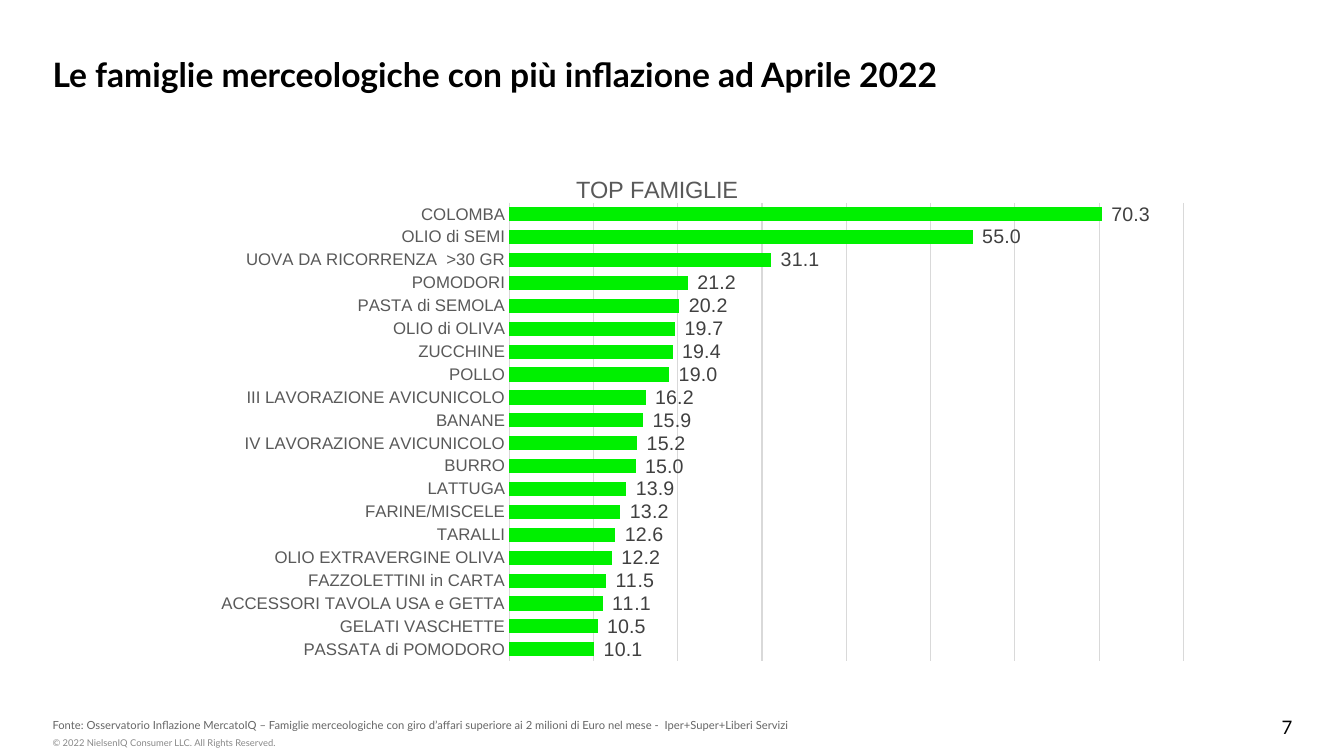
import pptx
import pptx.util
import pptx.chart.data
import pptx.dml.color
import pptx.enum.chart
import pptx.enum.text
import pptx.oxml
import pptx.oxml.ns

RGB = pptx.dml.color.RGBColor
BLACK = RGB(0, 0, 0)
GREEN = RGB(0, 240, 0)
DARK = RGB(64, 64, 64)
GREY = RGB(89, 89, 89)
NOTE = RGB(102, 102, 102)
PALE = RGB(136, 136, 136)
RULE = RGB(217, 217, 217)

PX = 9525
WIDE, HIGH = 1280, 720
FORMAT = r'_-* #,##0.0_-;\-* #,##0.0_-;_-* "-"??_-;'
HEAD = "TOP FAMIGLIE"
ROWS = [
    ("COLOMBA", 70.3),
    ("OLIO di SEMI", 55.0),
    ("UOVA DA RICORRENZA  >30 GR", 31.1),
    ("POMODORI", 21.2),
    ("PASTA di SEMOLA", 20.2),
    ("OLIO di OLIVA", 19.7),
    ("ZUCCHINE", 19.4),
    ("POLLO", 19.0),
    ("III LAVORAZIONE AVICUNICOLO", 16.2),
    ("BANANE", 15.9),
    ("IV LAVORAZIONE AVICUNICOLO", 15.2),
    ("BURRO", 15.0),
    ("LATTUGA", 13.9),
    ("FARINE/MISCELE", 13.2),
    ("TARALLI", 12.6),
    ("OLIO EXTRAVERGINE OLIVA", 12.2),
    ("FAZZOLETTINI in CARTA", 11.5),
    ("ACCESSORI TAVOLA USA e GETTA", 11.1),
    ("GELATI VASCHETTE", 10.5),
    ("PASSATA di POMODORO", 10.1),
]


def emu(*sizes):
    """Turn px lengths into EMU."""
    return [pptx.util.Emu(size * PX) for size in sizes]


def style(font, size, color, name="Arial", bold=False):
    """Set the size, colour, name and weight of a font."""
    font.size = pptx.util.Pt(size)
    font.color.rgb = color
    font.name = name
    font.bold = bold


def write(shape, text, size, color, pad=7, bold=False, right=False):
    """Fill a shape with one line of text."""
    frame = shape.text_frame
    frame.word_wrap = True
    frame.auto_size = pptx.enum.text.MSO_AUTO_SIZE.NONE
    frame.margin_left = frame.margin_right = 0
    frame.margin_top, frame.margin_bottom = emu(pad, pad)
    anchor = pptx.enum.text.MSO_ANCHOR
    frame.vertical_anchor = anchor.MIDDLE if right else anchor.TOP
    frame.text = text
    line = frame.paragraphs[0]
    align = pptx.enum.text.PP_ALIGN
    line.alignment = align.RIGHT if right else align.LEFT
    style(line.font, size, color, "Lato", bold)


def place(node, **parts):
    """Give a chart element a manual layout in shares of the chart."""
    for old in node.xpath("c:layout"):
        node.remove(old)
    inner = '<c:layoutTarget val="inner"/>' if "w" in parts else ""
    modes = "".join(f'<c:{key}Mode val="edge"/>' for key in "xy")
    sizes = "".join(f'<c:{key} val="{val}"/>' for key, val in parts.items())
    layout = pptx.oxml.parse_xml(
        f'<c:layout {pptx.oxml.ns.nsdecls("c")}><c:manualLayout>'
        f"{inner}{modes}{sizes}</c:manualLayout></c:layout>")
    node.insert(len(node.xpath("c:tx")), layout)


def title(slide, x, y, w, h):
    """Place the slide title."""
    shape = slide.shapes.title
    shape.left, shape.top, shape.width, shape.height = emu(x, y, w, h)
    write(shape, "Le famiglie merceologiche con più inflazione ad Aprile 2022",
          24, BLACK, 10, bold=True)


def bars(slide, x, y, w, h):
    """Place the bar chart of product families."""
    kinds = pptx.enum.chart
    data = pptx.chart.data.CategoryChartData(number_format="0.0")
    data.categories = [name for name, rate in ROWS]
    data.add_series(HEAD, [rate for name, rate in ROWS])
    chart = slide.shapes.add_chart(
        kinds.XL_CHART_TYPE.BAR_CLUSTERED, *emu(x, y, w, h), data).chart
    style(chart.font, 14, BLACK)
    chart.has_legend = False
    chart.has_title = True
    head = chart.chart_title.text_frame
    head.text = HEAD
    style(head.paragraphs[0].font, 16.8, GREY)
    place(chart.element.xpath(".//c:title")[0], x=0.43, y=0.04)
    place(chart.element.xpath(".//c:plotArea")[0],
          x=0.373, y=0.102, w=0.613, h=0.869)

    names = chart.category_axis
    names.reverse_order = True
    names.major_tick_mark = kinds.XL_TICK_MARK.NONE
    names.format.line.color.rgb = RULE
    names.format.line.width = pptx.util.Pt(0.75)
    style(names.tick_labels.font, 12, GREY)

    rates = chart.value_axis
    rates.visible = False
    rates.minimum_scale, rates.maximum_scale, rates.major_unit = 0, 80, 10
    rates.has_major_gridlines = True
    grid = rates.major_gridlines.format.line
    grid.color.rgb = RULE
    grid.width = pptx.util.Pt(0.75)

    plot = chart.plots[0]
    plot.gap_width, plot.overlap = 62, -4
    plot.vary_by_categories = False
    fill = plot.series[0].format.fill
    fill.solid()
    fill.fore_color.rgb = GREEN
    labels = plot.series[0].data_labels
    labels.show_value = True
    labels.number_format = FORMAT
    labels.number_format_is_linked = False
    labels.position = kinds.XL_LABEL_POSITION.OUTSIDE_END
    style(labels.font, 14, DARK)


def footer(slide, x, y, w, h):
    """Place the source, the copyright line and the page number."""
    box = slide.shapes.add_textbox
    write(box(*emu(x, y + 1, w - 39, 26)),
          "Fonte: Osservatorio Inflazione MercatoIQ – Famiglie merceologiche "
          "con giro d’affari superiore ai 2 milioni di Euro nel mese -  "
          "Iper+Super+Liberi Servizi", 8, NOTE, 10)
    write(box(*emu(x, y + h - 26, 708, 26)),
          "© 2022 NielsenIQ Consumer LLC. All Rights Reserved.", 6.7, PALE)
    write(box(*emu(x + w - 288, y, 288, 38)), "7", 13.3, BLACK, right=True)


def main():
    """Build and save the slide."""
    deck = pptx.Presentation()
    deck.slide_width, deck.slide_height = emu(WIDE, HIGH)
    slide = deck.slides.add_slide(deck.slide_layouts[5])
    title(slide, 50, 41, 1181, 55)
    bars(slide, 94, 142, 1048, 502)
    footer(slide, 50, 673, 1181, 48)
    deck.save("out.pptx")


if __name__ == "__main__":
    main()
